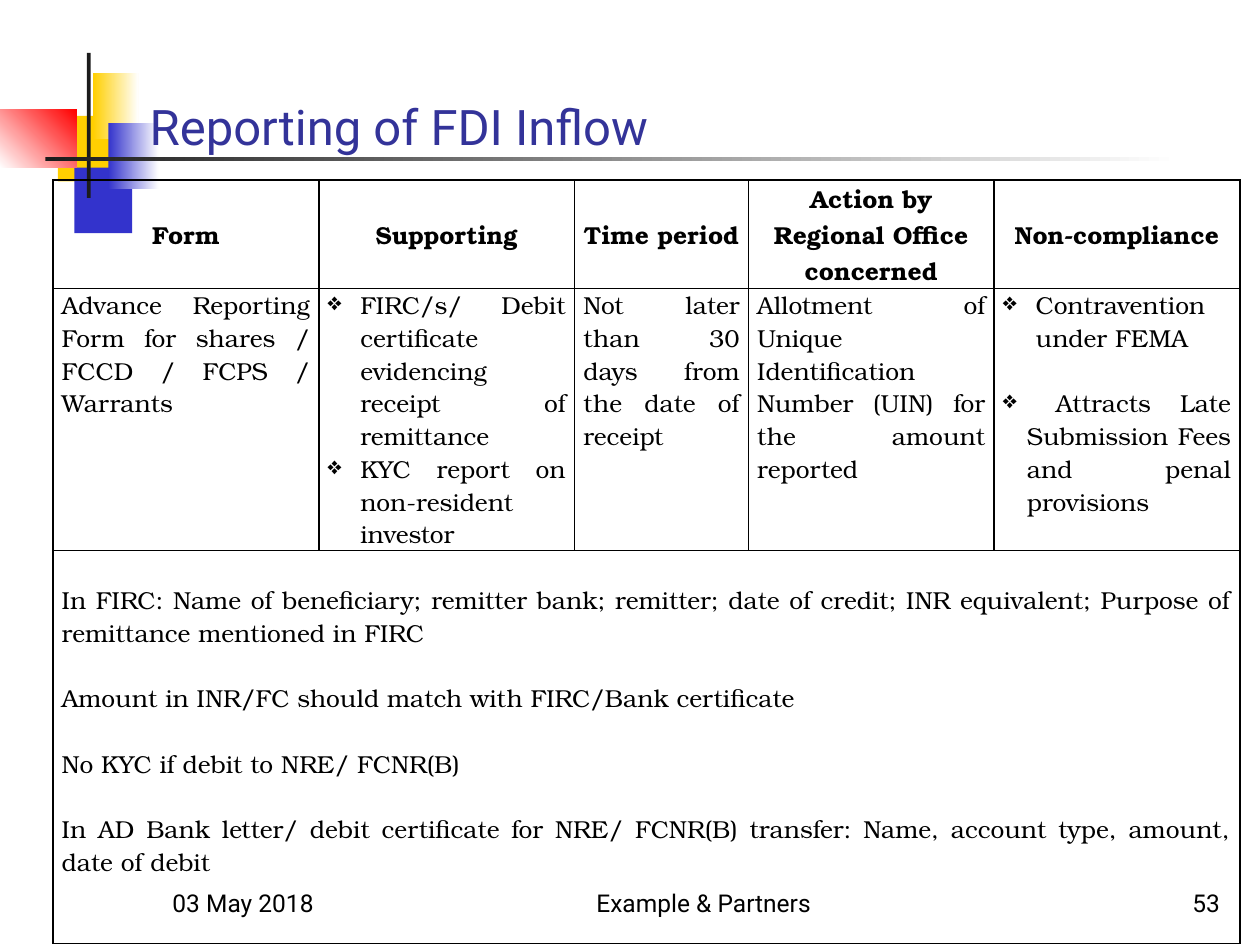
from lxml import etree
from pptx import Presentation
from pptx.dml.color import RGBColor
from pptx.enum.shapes import MSO_SHAPE
from pptx.enum.text import MSO_ANCHOR, PP_ALIGN
from pptx.oxml.ns import qn
from pptx.util import Inches, Pt

RECT = MSO_SHAPE.RECTANGLE
TOP, MIDDLE, BOTTOM = MSO_ANCHOR.TOP, MSO_ANCHOR.MIDDLE, MSO_ANCHOR.BOTTOM
LEFT, CENTER, RIGHT, JUSTIFY = PP_ALIGN.LEFT, PP_ALIGN.CENTER, PP_ALIGN.RIGHT, PP_ALIGN.JUSTIFY

BLACK = RGBColor(0x00, 0x00, 0x00)
WHITE = RGBColor(0xFF, 0xFF, 0xFF)
GOLD = RGBColor(0xFF, 0xCF, 0x01)
BLUE = RGBColor(0x33, 0x33, 0xCC)
RED = RGBColor(0xFF, 0x00, 0x00)
INK = RGBColor(0x1C, 0x1C, 0x1C)
TITLE_BLUE = RGBColor(0x33, 0x33, 0x99)

SANS, SERIF = "Roboto", "TeX Gyre Bonum"
LINE = 0.26

ORNAMENT = [
    (0.46, 0.5, 0.48, 0.52, [GOLD], 0),
    (0.59, 0.91, 0.46, 0.52, [BLUE], 0),
    (0.74, 0.16, 0.36, 0.52, [GOLD, WHITE], 0),
    (0.86, 0.56, 0.4, 0.52, [BLUE, WHITE], 0),
    (0, 0.45, 0.61, 0.46, [WHITE, RED], 45),
    (0.69, 0, 0.03, 1.15, [INK], 0),
    (0.36, 0.83, 9, 0.03, [INK, WHITE], 0),
]

COLUMNS = [2.11, 2.03, 1.38, 1.95, 1.95]
ROWS = [0.86, 2.08, 3.12]
HEADERS = ["Form", "Supporting", "Time period",
           "Action by Regional Office concerned", "Non-compliance"]
DETAILS = [
    ["Advance Reporting Form for shares / FCCD / FCPS / Warrants"],
    ["FIRC/s/ Debit certificate evidencing receipt of remittance",
     "KYC report on non-resident investor"],
    ["Not later than 30 days from the date of receipt"],
    ["Allotment of Unique Identification Number (UIN) for the amount reported"],
    ["Contravention under FEMA",
     " Attracts Late Submission Fees and penal provisions"],
]
BULLET_INDENTS = {1: [0.26, 0.26], 4: [0.26, 0.19]}
NOTES = [
    "In FIRC: Name of beneficiary; remitter bank; remitter; date of credit; "
    "INR equivalent; Purpose of remittance mentioned in FIRC",
    "Amount in INR/FC should match with FIRC/Bank certificate",
    "No KYC if debit to NRE/ FCNR(B)",
    "In AD Bank letter/ debit certificate for NRE/ FCNR(B) transfer: "
    "Name, account type, amount, date of debit",
]


def style(p, size, font, color, align, bold=False):
    p.alignment = align
    p.font.size = Pt(size)
    p.font.name = font
    p.font.color.rgb = color
    p.font.bold = bold


def add_ornament(s, left, top):
    for x, y, w, h, colors, angle in ORNAMENT:
        sp = s.shapes.add_shape(RECT, Inches(left + x), Inches(top + y), Inches(w), Inches(h))
        sp.shadow.inherit = False
        sp.line.fill.background()
        if len(colors) == 1:
            sp.fill.solid()
            sp.fill.fore_color.rgb = colors[0]
        else:
            sp.fill.gradient()
            sp.fill.gradient_angle = angle
            for stop, color in zip(sp.fill.gradient_stops, colors):
                stop.color.rgb = color


def add_text(s, left, top, width, height, text, size, color, align=LEFT, anchor=TOP):
    tf = s.shapes.add_textbox(Inches(left), Inches(top), Inches(width), Inches(height)).text_frame
    tf.word_wrap = True
    tf.vertical_anchor = anchor
    p = tf.paragraphs[0]
    p.text = text
    style(p, size, SANS, color, align)


def add_bullet(p, indent):
    pPr = p._p.get_or_add_pPr()
    pPr.set("marL", str(Inches(indent)))
    pPr.set("indent", str(-Inches(indent)))
    bullet = etree.Element(qn("a:buChar"), char="❖")
    pPr.insert_element_before(bullet, "a:tabLst", "a:defRPr", "a:extLst")


def add_borders(cell):
    tcPr = cell._tc.get_or_add_tcPr()
    for i, side in enumerate(("a:lnL", "a:lnR", "a:lnT", "a:lnB")):
        ln = etree.Element(qn(side), w=str(Pt(1)))
        fill = etree.SubElement(ln, qn("a:solidFill"))
        etree.SubElement(fill, qn("a:srgbClr"), val=str(BLACK))
        tcPr.insert(i, ln)


def fill_cell(cell, texts, align=JUSTIFY, anchor=TOP, bold=False, gap=0, indents=()):
    cell.vertical_anchor = anchor
    cell.margin_left = cell.margin_right = Inches(0.07)
    cell.margin_top = cell.margin_bottom = 0
    tf = cell.text_frame
    for i, text in enumerate(texts):
        p = tf.add_paragraph() if i else tf.paragraphs[0]
        p.text = text
        style(p, 14, SERIF, BLACK, align, bold)
        if i and gap:
            p.space_before = Inches(gap)
        if indents:
            add_bullet(p, indents[i])


def add_reporting_table(s, left, top):
    table = s.shapes.add_table(len(ROWS), len(COLUMNS), Inches(left), Inches(top),
                               Inches(sum(COLUMNS)), Inches(sum(ROWS))).table
    table.first_row = table.horz_banding = False
    for column, width in zip(table.columns, COLUMNS):
        column.width = Inches(width)
    for row, height in zip(table.rows, ROWS):
        row.height = Inches(height)
    for cell in table.iter_cells():
        cell.fill.background()
        add_borders(cell)
    for i, (header, texts) in enumerate(zip(HEADERS, DETAILS)):
        fill_cell(table.cell(0, i), [header], CENTER, MIDDLE, bold=True)
        fill_cell(table.cell(1, i), texts, gap=LINE if i == 4 else 0,
                  indents=BULLET_INDENTS.get(i, ()))
    notes = table.cell(2, 0)
    notes.merge(table.cell(2, len(COLUMNS) - 1))
    fill_cell(notes, NOTES, gap=LINE)
    notes.margin_top = Inches(LINE)


def add_footer(s, top, height):
    for left, width, text, align in [
        (1.27, 2.08, "03 May 2018", LEFT),
        (4, 3.17, "Example & Partners", CENTER),
        (7.7, 2.08, "53", RIGHT),
    ]:
        add_text(s, left, top, width, height, text, 14, BLACK, align, BOTTOM)


def main():
    prs = Presentation()
    prs.slide_width, prs.slide_height = Inches(10), Inches(7.5)
    s = prs.slides.add_slide(prs.slide_layouts[6])
    add_ornament(s, 0, 0.42)
    add_reporting_table(s, 0.42, 1.43)
    add_text(s, 1.09, 0.72, 8.34, 0.57, "Reporting of FDI Inflow", 28, TITLE_BLUE)
    add_footer(s, 6.83, 0.5)
    prs.save("out.pptx")


if __name__ == "__main__":
    main()
